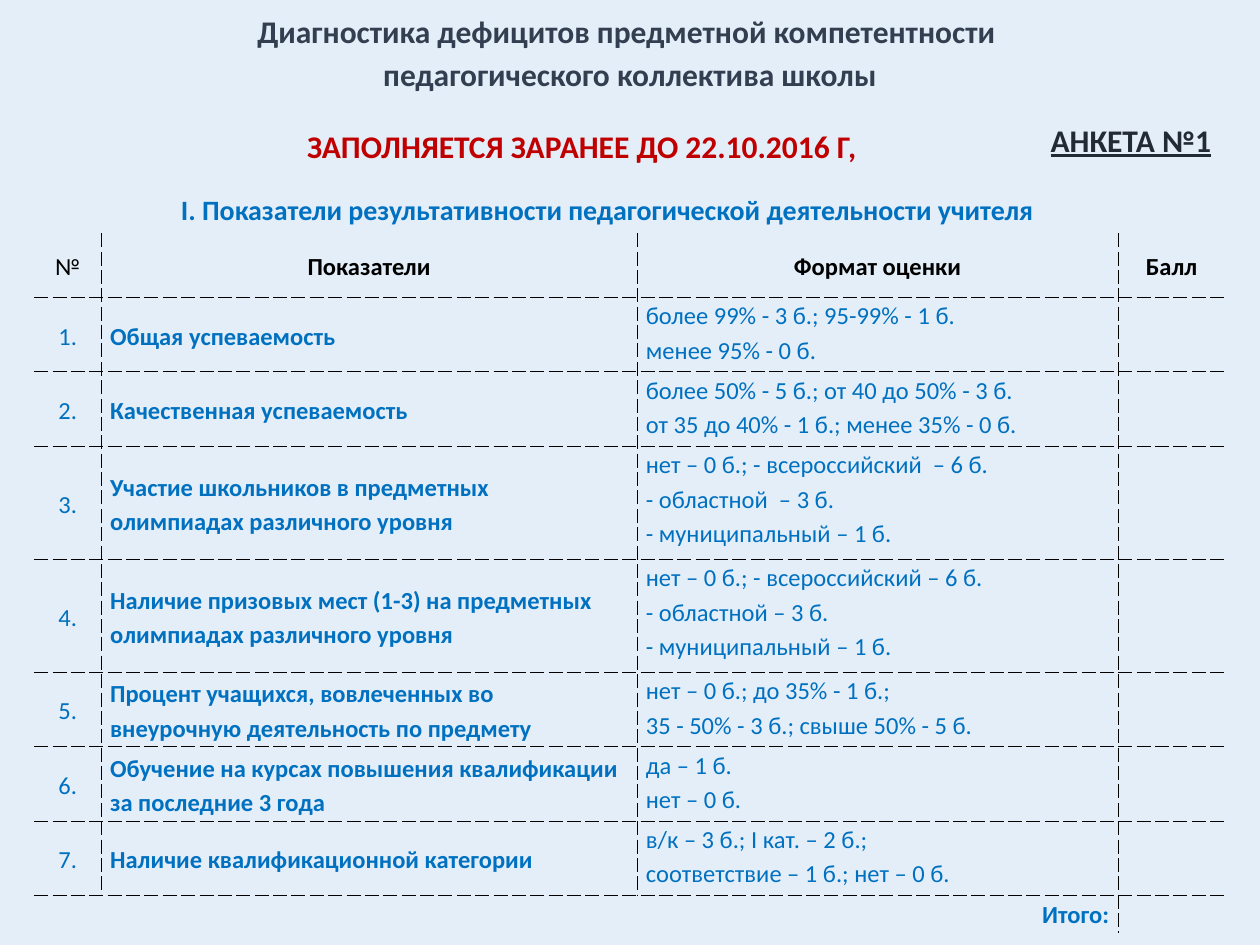
from lxml.etree import SubElement
from pptx import Presentation
from pptx.dml.color import RGBColor
from pptx.enum.text import MSO_ANCHOR, MSO_AUTO_SIZE, PP_ALIGN
from pptx.oxml.ns import qn
from pptx.util import Cm, Pt

HUES = {
    "back": "E3EEF8",
    "slate": "333F50",
    "navy": "222A35",
    "blue": "0070C0",
    "red": "C00000",
    "black": "000000",
}
LEFT, MID, RIGHT, JUST = PP_ALIGN.LEFT, PP_ALIGN.CENTER, PP_ALIGN.RIGHT, PP_ALIGN.JUSTIFY
HEADS = ["№", "Показатели", "Формат оценки", "Балл"]
ITEMS = [
    ("Общая успеваемость",
     "более 99% - 3 б.; 95-99% - 1 б.\nменее 95% - 0 б."),
    ("Качественная успеваемость",
     "более 50% - 5 б.; от 40 до 50% - 3 б.\nот 35 до 40% - 1 б.; менее 35% - 0 б."),
    ("Участие школьников в предметных олимпиадах различного уровня",
     "нет – 0 б.; - всероссийский  – 6 б.\n- областной  – 3 б.\n- муниципальный – 1 б."),
    ("Наличие призовых мест (1-3) на предметных олимпиадах различного уровня",
     "нет – 0 б.; - всероссийский – 6 б.\n- областной – 3 б.\n- муниципальный – 1 б."),
    ("Процент учащихся, вовлеченных во внеурочную деятельность по предмету",
     "нет – 0 б.; до 35% - 1 б.;\n35 - 50% - 3 б.; свыше 50% - 5 б."),
    ("Обучение на курсах повышения квалификации за последние 3 года",
     "да – 1 б.\nнет – 0 б."),
    ("Наличие квалификационной категории",
     "в/к – 3 б.; I кат. – 2 б.;\nсоответствие – 1 б.; нет – 0 б."),
]
WIDTHS = [1.35, 10.8, 9.7, 2.16]
HEIGHTS = [1.29, 1.5, 1.5, 2.28, 2.28, 1.5, 1.5, 1.5, 0.74]


def write(frame, text, size=14, hue="blue", bold=False, line=False, align=LEFT, space=1.0):
    for i, words in enumerate(text.split("\n")):
        para = frame.paragraphs[0] if i == 0 else frame.add_paragraph()
        para.alignment = align
        para.line_spacing = space
        para.space_before = Pt(0)
        run = para.add_run()
        run.text = words
        font = run.font
        font.name, font.size, font.bold = "Calibri", Pt(size), bold
        font.underline = line
        font.color.rgb = RGBColor.from_string(HUES[hue])


class Deck:
    def __init__(self):
        self.show = Presentation()
        self.show.slide_width, self.show.slide_height = Cm(25.4), Cm(19.05)
        self.slide = self.show.slides.add_slide(self.show.slide_layouts[5])
        fill = self.slide.background.fill
        fill.solid()
        fill.fore_color.rgb = RGBColor.from_string(HUES["back"])

    def title(self, text, x, y, w, h, **style):
        head = self.slide.shapes.title
        head.left, head.top, head.width, head.height = Cm(x), Cm(y), Cm(w), Cm(h)
        frame = head.text_frame
        frame.auto_size = MSO_AUTO_SIZE.NONE
        frame.vertical_anchor = MSO_ANCHOR.TOP
        write(frame, text, **style)

    def label(self, text, x, y, w, h, wrap=False, **style):
        frame = self.slide.shapes.add_textbox(Cm(x), Cm(y), Cm(w), Cm(h)).text_frame
        frame.word_wrap = wrap
        write(frame, text, **style)

    def table(self, x, y, widths, heights):
        shape = self.slide.shapes.add_table(
            len(heights), len(widths), Cm(x), Cm(y), Cm(sum(widths)), Cm(sum(heights)))
        grid = shape.table
        grid.first_row = grid.horz_banding = False
        for col, width in zip(grid.columns, widths):
            col.width = Cm(width)
        for row, height in zip(grid.rows, heights):
            row.height = Cm(height)
        return grid

    def cell(self, cell, text, edges, anchor=MSO_ANCHOR.MIDDLE, **style):
        cell.margin_left = cell.margin_right = Cm(0.18)
        cell.margin_top = cell.margin_bottom = 0
        cell.vertical_anchor = anchor
        write(cell.text_frame, text, space=1.15, **style)
        self.edge(cell, edges)
        cell.fill.background()

    def edge(self, cell, edges):
        props = cell._tc.get_or_add_tcPr()
        for side in "LRTB":
            line = SubElement(props, qn("a:ln" + side), w=str(Pt(0.25)))
            if side in edges:
                fill = SubElement(line, qn("a:solidFill"))
                SubElement(fill, qn("a:srgbClr"), val=HUES["black"])
                SubElement(line, qn("a:prstDash"), val="sysDash")
            else:
                SubElement(line, qn("a:noFill"))


def main():
    deck = Deck()
    deck.title("Диагностика дефицитов предметной компетентности \nпедагогического коллектива школы",
               0, 0, 25.4, 1.98, size=18, hue="slate", bold=True, align=MID, space=1.15)
    deck.label("I. Показатели результативности педагогической деятельности учителя",
               2.82, 3.76, 18.85, 0.94, wrap=True, size=16, bold=True, align=MID)

    grid = deck.table(0.69, 4.7, WIDTHS, HEIGHTS)
    last = len(HEIGHTS) - 1
    for c, text in enumerate(HEADS):
        edges = "B" + "L" * (c > 0) + "R" * (c < 3)
        deck.cell(grid.cell(0, c), text, edges, hue="black", bold=c > 0, align=MID)
    looks = [
        dict(align=MID),
        dict(bold=True),
        dict(align=JUST, anchor=MSO_ANCHOR.TOP),
        dict(),
    ]
    for r, (name, marks) in enumerate(ITEMS, 1):
        for c, text in enumerate([f"{r}.", name, marks, ""]):
            edges = "TB" + "L" * (c > 0) + "R" * (c < 3)
            deck.cell(grid.cell(r, c), text, edges, **looks[c])
    grid.cell(last, 0).merge(grid.cell(last, 2))
    deck.cell(grid.cell(last, 0), "Итого:", "TR", anchor=MSO_ANCHOR.TOP, bold=True, align=RIGHT)
    deck.cell(grid.cell(last, 3), "", "TL")

    deck.label("ЗАПОЛНЯЕТСЯ ЗАРАНЕЕ ДО 22.10.2016 Г,", 5.94, 2.43, 11.71, 1.02,
               size=18, hue="red", bold=True)
    deck.label("АНКЕТА №1", 20.93, 2.31, 3.78, 1.02,
               size=18, hue="navy", bold=True, line=True)
    deck.show.save("out.pptx")


if __name__ == "__main__":
    main()
